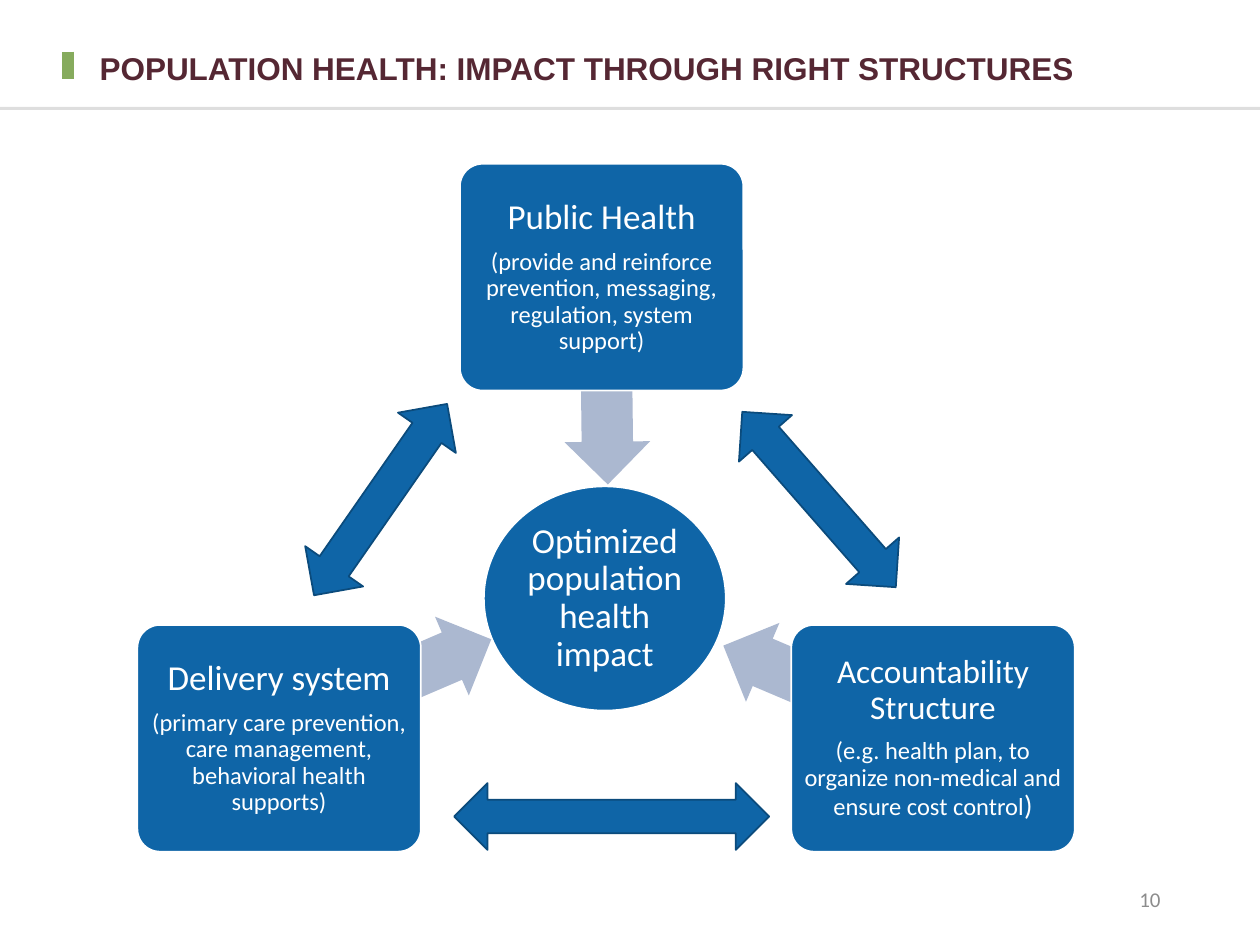
from dataclasses import dataclass

from lxml import etree
from pptx import Presentation
from pptx.dml.color import RGBColor
from pptx.enum.shapes import MSO_CONNECTOR, MSO_SHAPE
from pptx.enum.text import MSO_ANCHOR, MSO_AUTO_SIZE, PP_ALIGN
from pptx.oxml.ns import qn
from pptx.util import Inches, Pt

STRAIGHT = MSO_CONNECTOR.STRAIGHT
ELLIPSE = MSO_SHAPE.OVAL
BOX = MSO_SHAPE.ROUNDED_RECTANGLE
INWARD_ARROW = MSO_SHAPE.LEFT_ARROW
TWO_WAY_ARROW = MSO_SHAPE.UP_DOWN_ARROW
MIDDLE = MSO_ANCHOR.MIDDLE
LEFT, CENTER, RIGHT = PP_ALIGN.LEFT, PP_ALIGN.CENTER, PP_ALIGN.RIGHT


@dataclass(frozen=True)
class Theme:
    blue: RGBColor = RGBColor.from_string("0F65A7")
    dark_blue: RGBColor = RGBColor.from_string("0B4B7C")
    pale_blue: RGBColor = RGBColor.from_string("ABB8D0")
    white: RGBColor = RGBColor.from_string("FFFFFF")
    black: RGBColor = RGBColor.from_string("000000")
    green: RGBColor = RGBColor.from_string("86AB5D")
    maroon: RGBColor = RGBColor.from_string("552733")
    gray: RGBColor = RGBColor.from_string("8C8C8C")
    title_font: str = "Arial"
    body_font: str = "Calibri"
    title_size: int = 18
    heading_size: int = 20
    long_heading_size: int = 19
    detail_size: int = 14
    bracket_size: int = 16
    number_size: int = 12


theme = Theme()


def add_figure(kind, left, top, width, height, fill, outline=None, rotation=0):
    shape = slide.shapes.add_shape(kind, Inches(left), Inches(top), Inches(width), Inches(height))
    shape.shadow.inherit = False
    shape.rotation = rotation
    shape.fill.solid()
    shape.fill.fore_color.rgb = fill
    if outline is None:
        shape.line.fill.background()
    else:
        shape.line.color.rgb = outline
        shape.line.width = Pt(1)
    return shape


def write_paragraphs(shape, paragraphs, color, font=theme.body_font, alignment=CENTER,
                     bold=False, inset=None, space_after=0):
    frame = shape.text_frame
    frame.word_wrap = True
    frame.auto_size = MSO_AUTO_SIZE.NONE
    frame.vertical_anchor = MIDDLE
    if inset is not None:
        frame.margin_left = frame.margin_right = Inches(inset)
        frame.margin_top = frame.margin_bottom = Inches(inset)
    for index, runs in enumerate(paragraphs):
        paragraph = frame.add_paragraph() if index else frame.paragraphs[0]
        paragraph.alignment = alignment
        paragraph.line_spacing = 0.9
        paragraph.space_after = Pt(space_after * runs[0][1])
        for text, size in runs:
            run = paragraph.add_run()
            run.text = text
            run.font.name = font
            run.font.size = Pt(size)
            run.font.bold = bold
            run.font.color.rgb = color


presentation = Presentation()
presentation.slide_width = Inches(10)
presentation.slide_height = Inches(7.5)
slide = presentation.slides.add_slide(presentation.slide_layouts[5])

rules = [
    (0.54, 0.41, 0.54, 0.63, theme.green, 7, 100),
    (0, 0.86, 10, 0.86, theme.black, 1.75, 12),
]
for start_x, start_y, end_x, end_y, color, width, opacity in rules:
    rule = slide.shapes.add_connector(
        STRAIGHT, Inches(start_x), Inches(start_y), Inches(end_x), Inches(end_y))
    rule.line.color.rgb = color
    rule.line.width = Pt(width)
    properties = rule._element.spPr
    color_element = properties.find(".//" + qn("a:srgbClr"))
    etree.SubElement(color_element, qn("a:alpha"), val=str(opacity * 1000))
    etree.SubElement(properties, qn("a:effectLst"))

title = slide.shapes.title
title.left, title.top = Inches(0.69), Inches(0.27)
title.width, title.height = Inches(8.62), Inches(0.57)
write_paragraphs(
    title, [[("POPULATION HEALTH: IMPACT THROUGH RIGHT STRUCTURES", theme.title_size)]],
    theme.maroon, theme.title_font, LEFT, bold=True)

number_box = slide.shapes.add_textbox(Inches(7.06), Inches(6.95), Inches(2.25), Inches(0.4))
write_paragraphs(number_box, [[("10", theme.number_size)]], theme.gray, alignment=RIGHT)

two_way_arrows = [
    (4.59, 5.23, 0.53, 2.5, 270),
    (2.74, 3.04, 0.56, 1.85, 214.8),
    (6.22, 3.04, 0.56, 1.85, 138.8),
]
for left, top, width, height, rotation in two_way_arrows:
    add_figure(TWO_WAY_ARROW, left, top, width, height, theme.blue, theme.dark_blue, rotation)

goal = add_figure(ELLIPSE, 3.84, 3.86, 1.92, 1.78, theme.blue, theme.white)
write_paragraphs(goal, [[("Optimized population health impact", theme.heading_size)]],
                 theme.white, inset=0.01, space_after=0.35)

partners = [
    ((1.09, 4.96), (2.21, 5.08, 1.76, 156.8), [
        [("Delivery system", theme.heading_size)],
        [("(primary care prevention, care management, behavioral health supports)",
          theme.detail_size)],
    ]),
    ((3.65, 1.3), (4.03, 2.72, 1.57, 269.3), [
        [("Public Health", theme.heading_size)],
        [("(provide and reinforce prevention, messaging, regulation, system support)",
          theme.detail_size)],
    ]),
    ((6.28, 4.96), (5.67, 5.13, 1.77, 23), [
        [("Accountability Structure", theme.long_heading_size)],
        [("(e.g. health plan, to organize non-medical and ensure cost control",
          theme.detail_size), (")", theme.bracket_size)],
    ]),
]
for (box_left, box_top), (left, top, length, rotation), paragraphs in partners:
    arrow = add_figure(INWARD_ARROW, left, top, length, 0.68, theme.pale_blue, rotation=rotation)
    arrow.adjustments[0] = 0.6
    arrow.adjustments[1] = 0.5
    box = add_figure(BOX, box_left, box_top, 2.25, 1.8, theme.blue, theme.white)
    box.adjustments[0] = 0.1
    write_paragraphs(box, paragraphs, theme.white, inset=0.04, space_after=0.35)

presentation.save("out.pptx")
